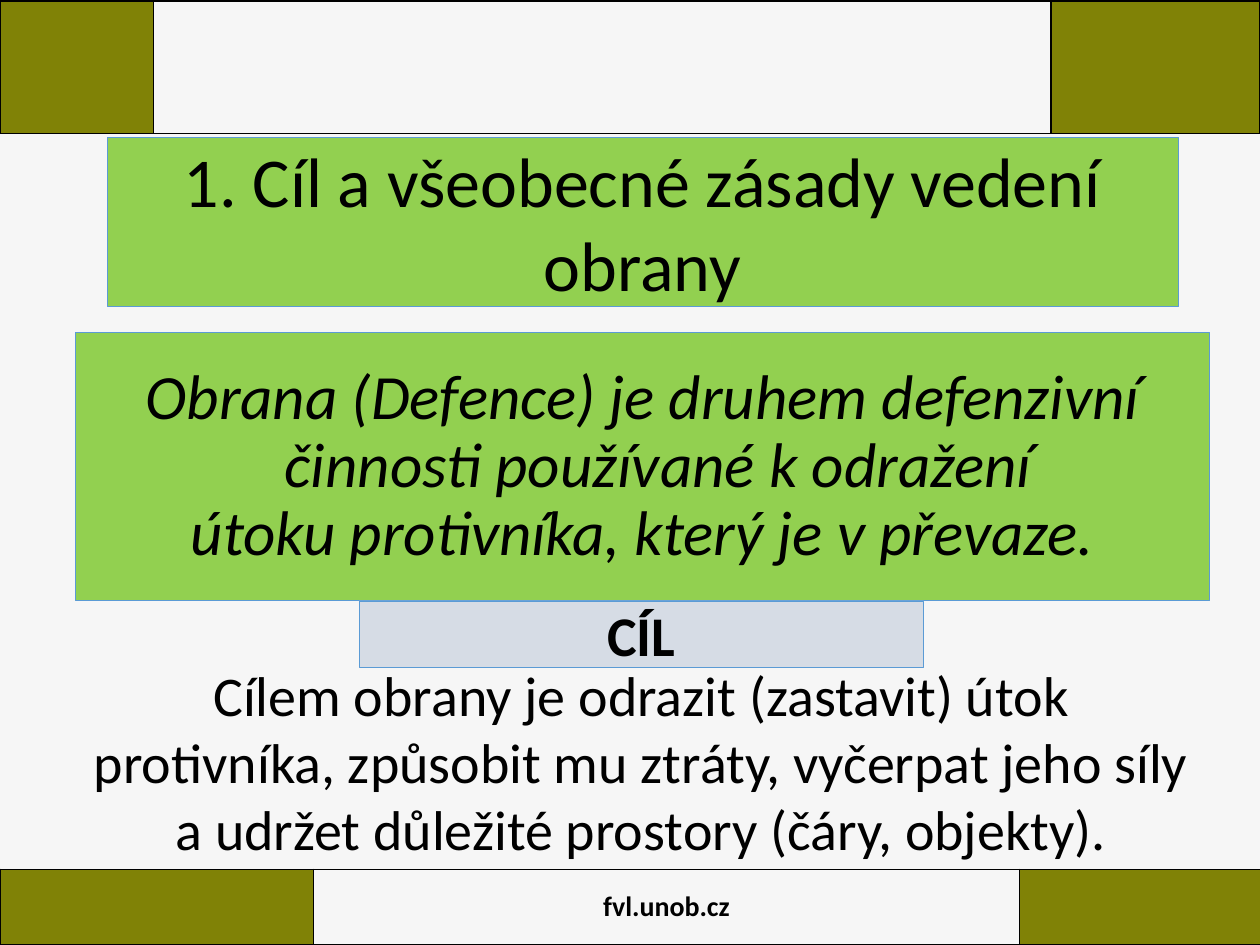
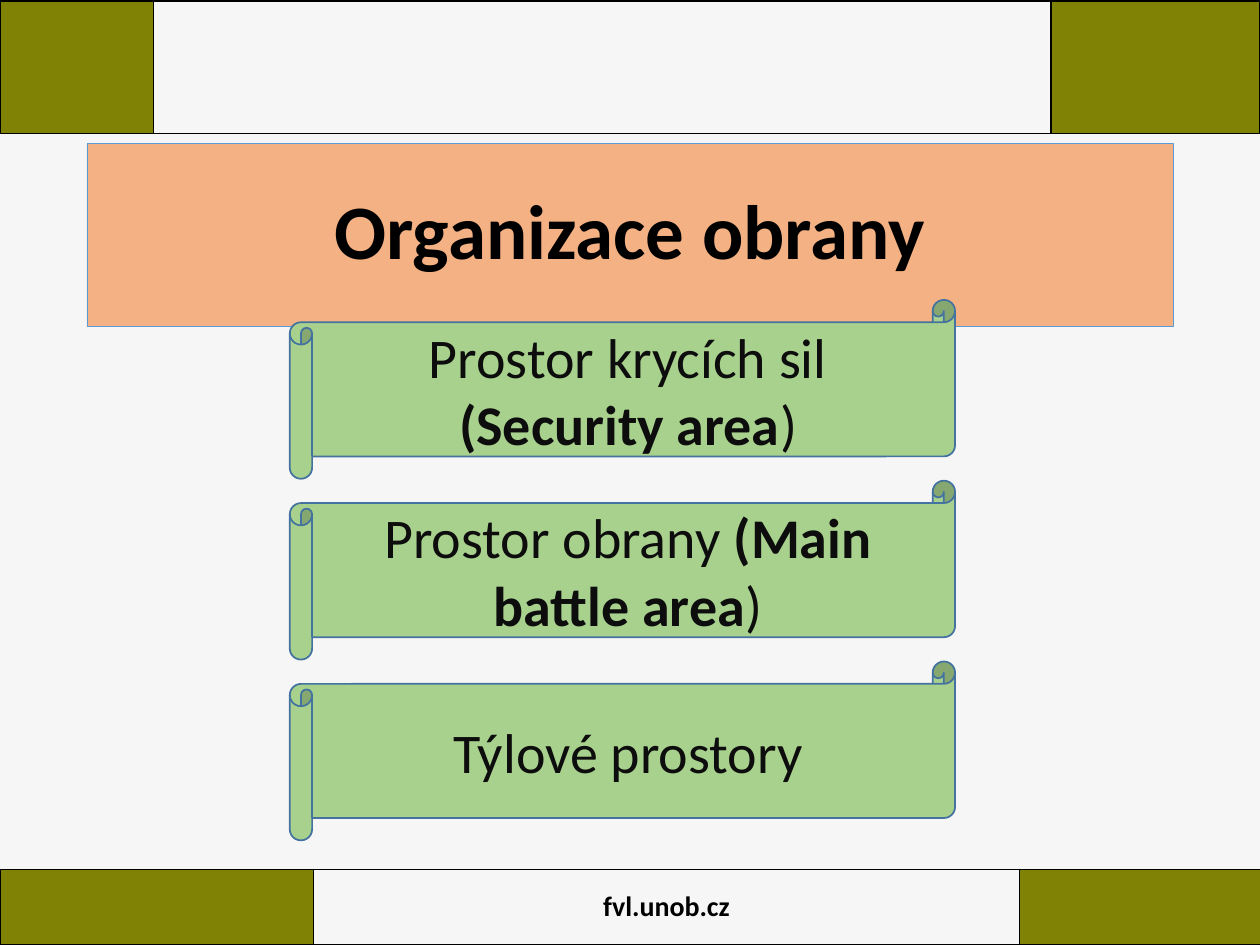
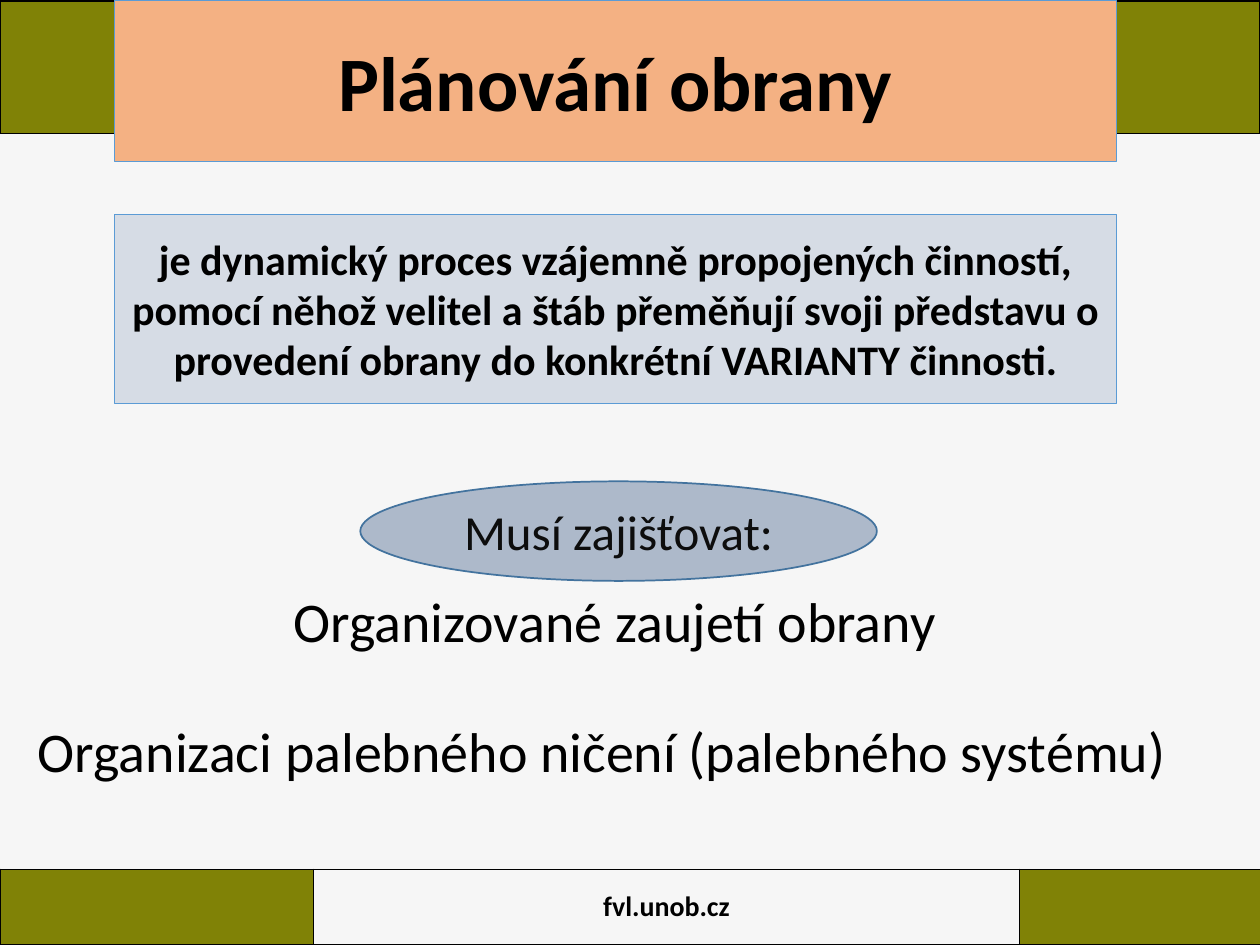
import pptx
import pptx.util
import pptx.dml.color
import pptx.enum.shapes
import pptx.enum.text
import pptx.oxml
import pptx.oxml.ns

Inches = pptx.util.Inches
Pt = pptx.util.Pt
RGB = pptx.dml.color.RGBColor
KIND = pptx.enum.shapes.MSO_SHAPE
MIDDLE = pptx.enum.text.MSO_ANCHOR.MIDDLE
ALIGN = pptx.enum.text.PP_ALIGN

PAPER = RGB(0xF6, 0xF6, 0xF6)
OLIVE = RGB(0x80, 0x82, 0x06)
LIME = RGB(0x92, 0xD0, 0x50)
ORANGE = RGB(0xF4, 0xB1, 0x83)
GREEN = RGB(0xA9, 0xD1, 0x8E)
PALE = RGB(0xD6, 0xDC, 0xE5)
SLATE = RGB(0xAD, 0xB9, 0xCA)
BLUE = RGB(0x5B, 0x9B, 0xD5)
NAVY = RGB(0x43, 0x73, 0x9E)
BLACK = RGB(0, 0, 0)
INK = RGB(0x0D, 0x0D, 0x0D)
FONT = "Calibri"
BORDER = ('<a:{} xmlns:a="http://schemas.openxmlformats.org/drawingml/2006/main"'
          ' w="12700"><a:solidFill><a:srgbClr val="000000"/></a:solidFill></a:{}>')


def band(slide, top, height, widths, label):
    """Three-cell strip with olive ends."""
    frame = slide.shapes.add_table(1, 3, 0, Inches(top), Inches(sum(widths)), Inches(height))
    table = frame.table
    table.first_row = table.horz_banding = False
    for col, width in enumerate(widths):
        table.columns[col].width = Inches(width)
        cell = table.cell(0, col)
        cell.vertical_anchor = MIDDLE
        if col == 1:
            cell.fill.background()
        else:
            cell.fill.solid()
            cell.fill.fore_color.rgb = OLIVE
        props = cell._tc.get_or_add_tcPr()
        for pos, side in enumerate(("lnL", "lnR", "lnT", "lnB")):
            props.insert(pos, pptx.oxml.parse_xml(BORDER.format(side, side)))
    if label:
        para = table.cell(0, 1).text_frame.paragraphs[0]
        para.text = label
        para.alignment = ALIGN.CENTER
        font = para.runs[0].font
        font.name, font.size, font.bold = FONT, Pt(16), True
        font.color.rgb = BLACK


def block(slide, kind, place, text, size, fill=None, bold=False, align=ALIGN.CENTER):
    """Shape or plain text; parts between bars are bold."""
    place = [Inches(n) for n in place]
    if kind is None:
        shape = slide.shapes.add_textbox(*place)
    else:
        shape = slide.shapes.add_shape(kind, *place)
        shape.shadow.inherit = False
        shape.fill.solid()
        shape.fill.fore_color.rgb = fill
        plain = kind == KIND.RECTANGLE
        shape.line.color.rgb = BLUE if plain else NAVY
        shape.line.width = Pt(0.5 if plain else 1)
        shape.text_frame.vertical_anchor = MIDDLE
    frame = shape.text_frame
    frame.word_wrap = True
    frame.text = text.replace("|", "")
    for para, line in zip(frame.paragraphs, text.split("\n")):
        para.alignment = align
        parts = line.split("|")
        para.runs[0].text = parts[0]
        for part in parts[1:]:
            para.add_run().text = part
        for pos, run in enumerate(para.runs):
            font = run.font
            font.name, font.size = FONT, Pt(size)
            font.bold = bold or pos % 2 == 1
            font.color.rgb = INK if kind in (KIND.OVAL, KIND.HORIZONTAL_SCROLL) else BLACK
    return shape


deck = pptx.Presentation()
deck.slide_width, deck.slide_height = Inches(10), Inches(7.5)

# Shared background and bands
for _ in range(3):
    slide = deck.slides.add_slide(deck.slide_layouts[6])
    slide.background.fill.solid()
    slide.background.fill.fore_color.rgb = PAPER
    band(slide, 6.9, 0.6, (2.49, 5.6, 1.92), "fvl.unob.cz")
    band(slide, 0.01, 1.05, (1.22, 7.12, 1.66), "")
aim, zones, plan = deck.slides
RECT = KIND.RECTANGLE

# Aim of defence
quote = block(aim, RECT, (0.6, 2.64, 9, 2.13),
              "Obrana (Defence) je druhem defenzivní činnosti používané k odražení\n"
              "útoku protivníka, který je v převaze.", 36, LIME)
for para in quote.text_frame.paragraphs:
    para.line_spacing = 0.9
    para.runs[0].font.italic = True
    props = para._p.get_or_add_pPr()
    props.set("marL", str(Inches(0.25)))
    props.set("indent", str(-Inches(0.25)))
block(aim, RECT, (0.85, 1.09, 8.5, 1.34), "1. Cíl a všeobecné zásady vedení obrany", 40, LIME)
block(aim, RECT, (2.85, 4.77, 4.48, 0.53), "CÍL", 32, PALE, True)
block(aim, None, (0.6, 5.19, 8.98, 1.72),
      "Cílem obrany je odrazit (zastavit) útok protivníka, způsobit mu ztráty, "
      "vyčerpat jeho síly a udržet důležité prostory (čáry, objekty).", 32)

# Organisation: three scrolls
title = block(zones, RECT, (0.69, 1.14, 8.62, 1.45), "Organizace obrany", 44, ORANGE, True)
title.text_frame.paragraphs[0].line_spacing = 0.9
areas = ("Prostor krycích sil |(Security area|)",
         "Prostor obrany |(Main battle area|)",
         "Týlové prostory")
for row, area in enumerate(areas):
    block(zones, KIND.HORIZONTAL_SCROLL, (2.3, 2.38 + row * 1.435, 5.28, 1.42), area, 32, GREEN)

# Planning
block(plan, RECT, (0.91, 0, 7.95, 1.28), "Plánování obrany", 44, ORANGE, True)
block(plan, RECT, (0.91, 1.7, 7.95, 1.5),
      "je dynamický proces vzájemně propojených činností,\n"
      "pomocí něhož velitel a štáb přeměňují svoji představu o provedení obrany "
      "do konkrétní VARIANTY činnosti.", 24, PALE, True)
block(plan, KIND.OVAL, (2.86, 3.82, 4.1, 0.79), "Musí zajišťovat:", 28, SLATE)
need = block(plan, None, (2.23, 4.61, 5.36, 0.64), "Organizované zaujetí obrany", 32,
             align=ALIGN.LEFT)
need.text_frame.word_wrap = False
block(plan, None, (0.2, 5.64, 9.61, 0.64), "Organizaci palebného ničení (palebného systému)", 32,
      align=ALIGN.LEFT)

deck.save("out.pptx")
